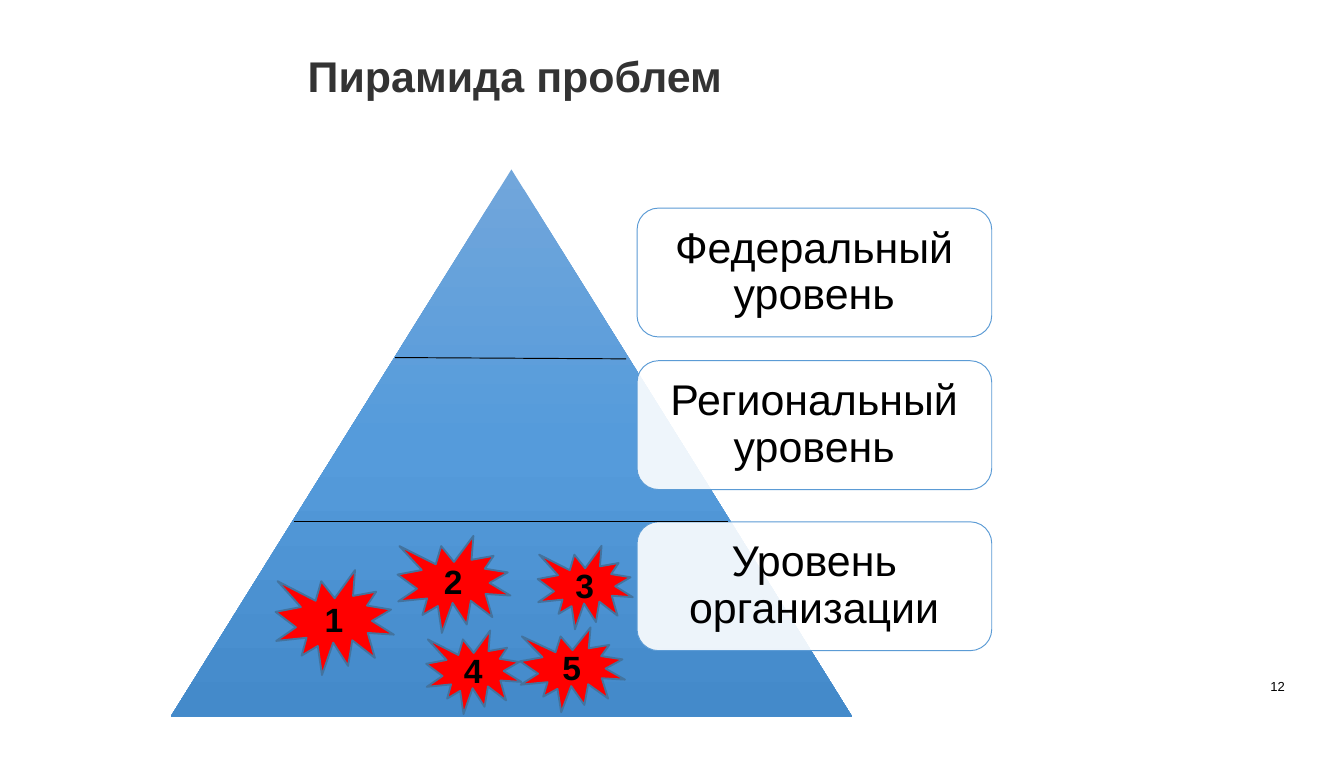
from copy import deepcopy
from lxml import etree
from pptx import Presentation
from pptx.dml.color import RGBColor
from pptx.enum.shapes import MSO_CONNECTOR as Link, MSO_SHAPE as Shape
from pptx.enum.text import MSO_ANCHOR as Anchor, PP_ALIGN as Align
from pptx.oxml.ns import qn
from pptx.util import Pt

# Content; lengths in points
TITLE = "Пирамида проблем"
PAGE = "12"
PYRAMID = (91.5, 90.8, 365, 293)
SHADES = [(0, "71A6DB"), (0.5, "559BDB"), (1, "448ACA")]
LEVELS = [  # text, top
    ("Федеральный уровень", 111.5),
    ("Региональный уровень", 193.2),
    ("Уровень организации", 279.5),
]
CARD = (341.3, 190, 69)  # left, width, height
BORDERS = [(211.7, 191.5, 335.5, 192.2), (157.7, 279.4, 390.2, 279.4)]
BURSTS = [
    (147.6, 305.3, 63.4, 56.2),
    (213, 287, 60.5, 52),
    (288, 292.3, 51, 44.7),
    (228.3, 337.7, 51, 44.7),
    (278.6, 336, 56.2, 45.5),
]


def color(code):
    return RGBColor.from_string(code)


def write(shape, text, size, hue="000000", bold=False, align=Align.CENTER,
          anchor=Anchor.MIDDLE, pad=0, wrap=True, gap=1.0):
    frame = shape.text_frame
    frame.text = text
    frame.word_wrap = wrap
    frame.vertical_anchor = anchor
    frame.margin_left = frame.margin_right = Pt(pad)
    frame.margin_top = frame.margin_bottom = Pt(pad)
    para = frame.paragraphs[0]
    para.alignment = align
    para.line_spacing = gap
    font = para.runs[0].font
    font.name, font.size, font.bold = "Arial", Pt(size), bold
    font.color.rgb = color(hue)


def add_shape(kind, box, fill=None, line=None, width=1):
    shape = slide.shapes.add_shape(kind, *map(Pt, box))
    shape.shadow.inherit = False
    if fill:
        shape.fill.solid()
        shape.fill.fore_color.rgb = color(fill)
    if line:
        shape.line.color.rgb = color(line)
        shape.line.width = Pt(width)
    else:
        shape.line.fill.background()
    return shape


def add_text(box, text, size, **style):
    write(slide.shapes.add_textbox(*map(Pt, box)), text, size, **style)


deck = Presentation()
deck.slide_width, deck.slide_height = Pt(720), Pt(405.4)
slide = deck.slides.add_slide(deck.slide_layouts[6])

# Title and page number
add_text((164.9, 29.5, 393.8, 25.9), TITLE, 23, hue="333333", bold=True,
         align=Align.LEFT, anchor=Anchor.TOP, gap=0.9)
add_text((644.4, 360.7, 43.9, 10.8), PAGE, 7, align=Align.RIGHT,
         anchor=Anchor.BOTTOM)

# Pyramid with a three-stop gradient, top to bottom
peak = add_shape(Shape.ISOSCELES_TRIANGLE, PYRAMID)
peak.fill.gradient()
peak.fill.gradient_angle = 270
stops = peak.fill._fill._gradFill.find(qn("a:gsLst"))
stops.insert(1, deepcopy(stops[0]))
for stop, (place, hue) in zip(peak.fill.gradient_stops, SHADES):
    stop.position = place
    stop.color.rgb = color(hue)

# Level cards, slightly see-through
left, wide, high = CARD
for text, top in LEVELS:
    card = add_shape(Shape.ROUNDED_RECTANGLE, (left, top, wide, high),
                     "FFFFFF", "5B9BD5", 0.5)
    tint = card.fill._xPr.find(qn("a:solidFill"))[0]
    etree.SubElement(tint, qn("a:alpha")).set("val", "90000")
    write(card, text, 23, pad=7.2, gap=0.9)

# Borders between levels
for ends in BORDERS:
    rule = slide.shapes.add_connector(Link.STRAIGHT, *map(Pt, ends))
    rule.line.color.rgb = color("000000")
    rule.line.width = Pt(0.5)
    etree.SubElement(rule._element.spPr, qn("a:effectLst"))

# Numbered problems
for num, box in enumerate(BURSTS, 1):
    burst = add_shape(Shape.EXPLOSION1, box, "FF0000", "43739E")
    write(burst, str(num), 18, bold=True, wrap=False)

deck.save("out.pptx")
